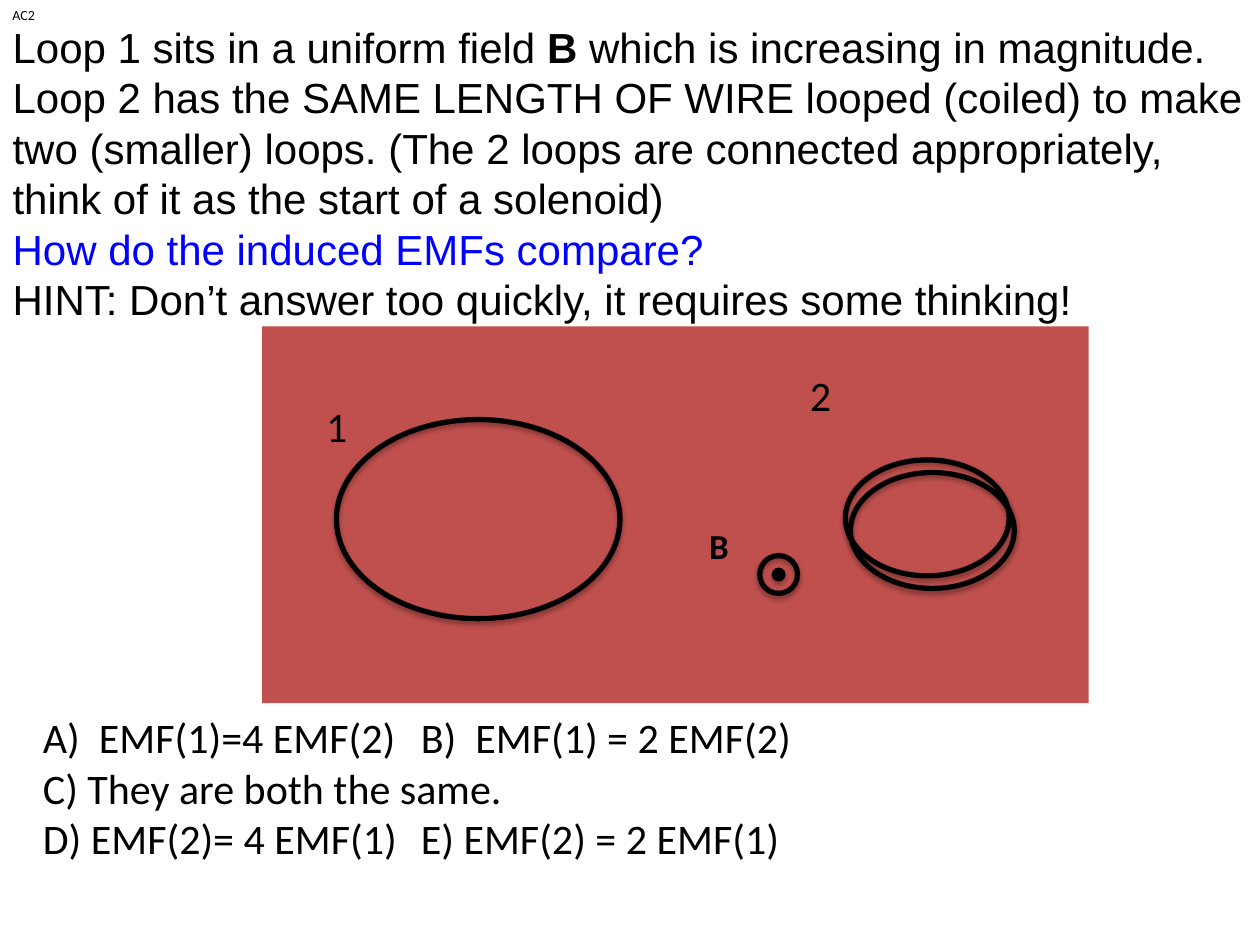
from dataclasses import dataclass

from lxml import etree
from pptx import Presentation, util as u
from pptx.dml.color import RGBColor
from pptx.enum import shapes, text
from pptx.oxml.ns import qn

COLUMNS, ROWS = 100, 75
CELL = u.Inches(0.1)


@dataclass(frozen=True)
class Theme:
    """Colours, fonts and type sizes of the slide."""
    ink: str = "000000"
    question: str = "0000FF"
    field: str = "C0504D"
    heading: str = "Arial"
    body: str = "Calibri"
    large: int = 24
    medium: int = 20
    small: int = 8


THEME = Theme()


def cells(*counts):
    """Turn counts of grid cells into lengths."""
    return [u.Emu(round(count * CELL)) for count in counts]


def set_all(target, values):
    """Set every attribute named in a dict of values."""
    for name, value in values.items():
        setattr(target, name, value)


def move(shape, area):
    """Place a shape on a left, top, width, height area of the grid."""
    set_all(shape, dict(zip(("left", "top", "width", "height"), cells(*area))))


def write(para, content, font, size, color=THEME.ink, bold=False):
    """Add a formatted span, with line breaks where the content has them."""
    for index, line in enumerate(content.split("\n")):
        if index:
            para.add_line_break()
        if line:
            span = para.add_run()
            span.text = line
            set_all(span.font, {"name": font, "size": u.Pt(size), "bold": bold})
            span.font.color.rgb = RGBColor.from_string(color)


def add_title(page, area, spans):
    """Fill the title placeholder with left-aligned spans."""
    title = page.shapes.title
    move(title, area)
    set_all(title.text_frame, {
        "auto_size": text.MSO_AUTO_SIZE.NONE, "word_wrap": True,
        "vertical_anchor": text.MSO_ANCHOR.MIDDLE})
    para = title.text_frame.paragraphs[0]
    para.alignment = text.PP_ALIGN.LEFT
    for content, values in spans:
        write(para, content, THEME.heading, THEME.large, **values)


def add_answers(page, area, answers):
    """Fill the body placeholder with unbulleted lines aligned at tab stops."""
    body = page.placeholders[1]
    move(body, area)
    frame = body.text_frame
    set_all(frame, {"auto_size": text.MSO_AUTO_SIZE.NONE, "word_wrap": True})
    for index, (content, stop) in enumerate(answers):
        para = frame.add_paragraph() if index else frame.paragraphs[0]
        para.space_before = u.Pt(0)
        properties = para._p.get_or_add_pPr()
        properties.set("marL", "0")
        properties.set("indent", "0")
        etree.SubElement(properties, qn("a:buNone"))
        tabs = etree.SubElement(properties, qn("a:tabLst"))
        etree.SubElement(tabs, qn("a:tab"), pos=str(cells(stop)[0]), algn="l")
        write(para, content, THEME.body, THEME.large)


def add_label(page, area, content, size, bold=False):
    """Add a short label in a box that does not wrap."""
    box = page.shapes.add_textbox(*cells(*area))
    box.text_frame.word_wrap = False
    write(box.text_frame.paragraphs[0], content, THEME.body, size, bold=bold)


def add_field(page, area):
    """Add the plain rectangle of the uniform field."""
    field = page.shapes.add_shape(shapes.MSO_SHAPE.RECTANGLE, *cells(*area))
    field.shadow.inherit = False
    field.fill.solid()
    field.fill.fore_color.rgb = RGBColor.from_string(THEME.field)
    field.line.fill.background()


def add_loop(holder, area, weight=3, filled=False):
    """Add a wire ellipse with a soft shadow below it."""
    loop = holder.shapes.add_shape(shapes.MSO_SHAPE.OVAL, *cells(*area))
    ink = RGBColor.from_string(THEME.ink)
    if filled:
        loop.fill.solid()
        loop.fill.fore_color.rgb = ink
    else:
        loop.fill.background()
    loop.line.color.rgb = ink
    loop.line.width = u.Pt(weight)
    loop.shadow.inherit = False
    effects = loop._element.spPr.find(qn("a:effectLst"))
    shadow = etree.SubElement(
        effects, qn("a:outerShdw"), blurRad=str(u.Pt(3.1)), dist=str(u.Pt(1.8)),
        dir="5400000", rotWithShape="0")
    color = etree.SubElement(shadow, qn("a:srgbClr"), val=THEME.ink)
    etree.SubElement(color, qn("a:alpha"), val="35000")


def add_field_mark(page, left, top, size):
    """Add the dotted circle of a field that points at the viewer."""
    mark = page.shapes.add_group_shape()
    add_loop(mark, (left, top, size, size))
    dot = size / 3
    add_loop(mark, (left + dot, top + dot, dot, dot), 0.75, True)


def main():
    """Build the slide and save it."""
    deck = Presentation()
    deck.slide_width, deck.slide_height = cells(COLUMNS, ROWS)
    page = deck.slides.add_slide(deck.slide_layouts[1])
    add_title(page, (0, 0.4, COLUMNS, 26.6), [
        ("Loop 1 sits in a uniform field ", {}),
        ("B", {"bold": True}),
        (" which is increasing in magnitude. Loop 2 has the SAME LENGTH OF WIRE "
         "looped (coiled) to make two (smaller) loops. (The 2 loops are connected "
         "appropriately, think of it as the start of a solenoid)\n", {}),
        ("How do the induced EMFs compare?\n", {"color": THEME.question}),
        ("HINT: Don’t answer too quickly, it requires some thinking!", {})])
    add_answers(page, (2.4, 56, 88.4, 13.1), [
        ("A)  EMF(1)=4 EMF(2)\tB)  EMF(1) = 2 EMF(2)", 43.1),
        ("C) They are both the same.\n"
         "D) EMF(2)= 4 EMF(1)\tE) EMF(2) = 2 EMF(1)", 45)])
    add_field(page, (20.8, 25.9, 65.6, 29.9))
    add_field_mark(page, 60.3, 44.1, 3)
    add_label(page, (55.3, 41.1, 4, 4.4), "B", THEME.medium, True)
    add_loop(page, (26.7, 33.3, 22.5, 15.8))
    add_label(page, (24.9, 31.3, 3.9, 5), "1", THEME.large)
    add_label(page, (63.3, 28.8, 3.9, 5), "2", THEME.large)
    for turn in range(2):
        add_loop(page, (67.1 + turn * 0.4, 36.5 + turn, 13, 9.2))
    add_label(page, (0, 0, 3.8, 2.4), "AC2", THEME.small)
    deck.save("out.pptx")


if __name__ == "__main__":
    main()
